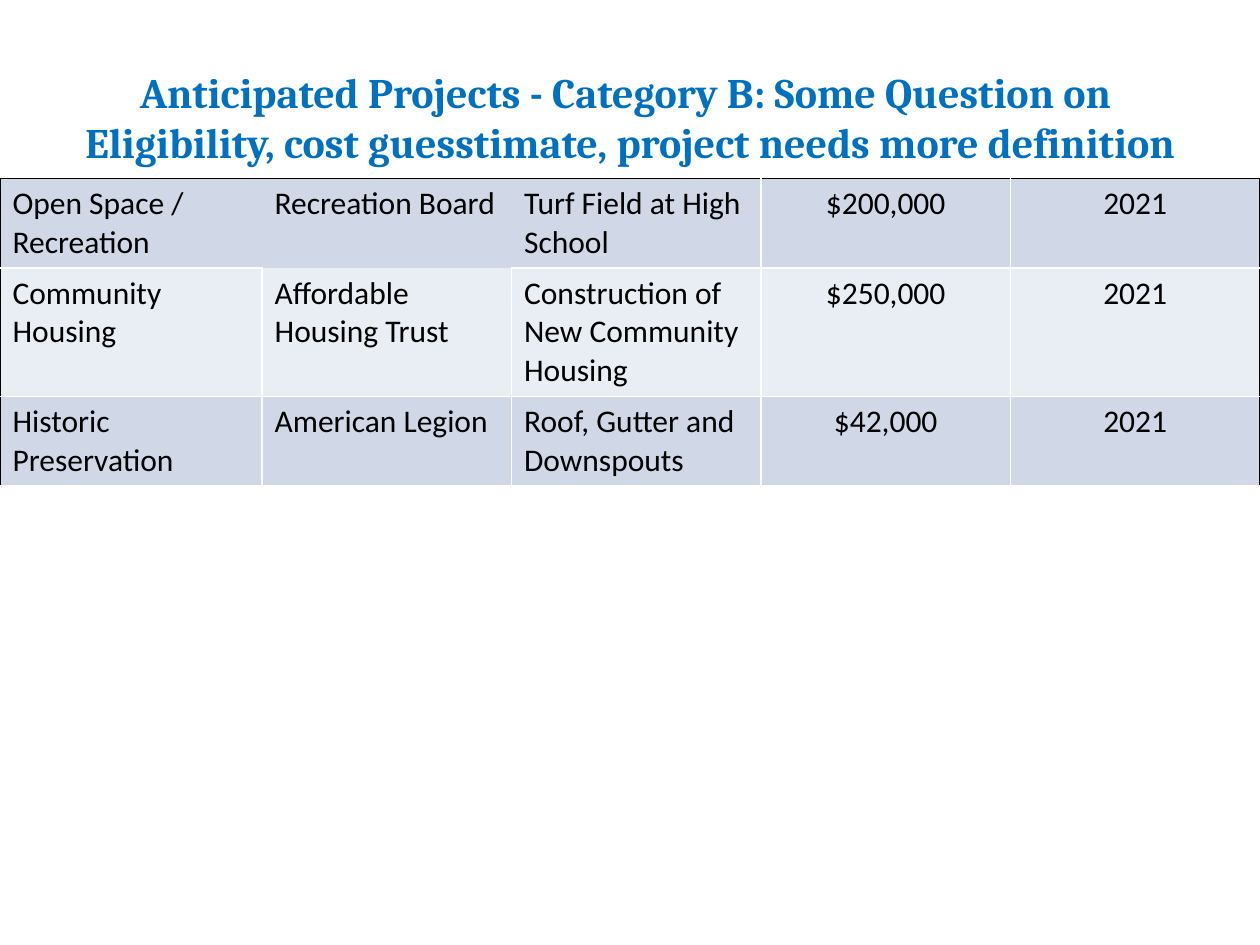
from dataclasses import astuple, dataclass

from lxml.etree import SubElement
from pptx import Presentation
from pptx.dml.color import RGBColor
from pptx.enum.text import MSO_ANCHOR, PP_ALIGN
from pptx.oxml.ns import qn
from pptx.util import Inches, Pt

COLORS = {
    "title": "0070C0",
    "text": "000000",
    "outline": "000000",
    "grid": "FFFFFF",
    "odd_row": "D0D8E8",
    "even_row": "E9EDF4",
}
TITLE_FONT = {"name": "Cambria", "size": Pt(24), "bold": True}
CELL_FONT = {"name": "Calibri", "size": Pt(18), "bold": False}

# Shares of the slide's width and height
COLUMN_SHARES = (0.208, 0.198, 0.198, 0.198, 0.198)
TABLE_TOP = 0.189
TITLE_TOP, TITLE_HEIGHT = 0.04, 0.167
ROW_HEIGHTS = (0.71, 1.02, 0.71)  # inches

# Sides (row, column, side) that have no line
OPEN_SIDES = {
    (0, 0, "R"), (0, 1, "L"), (0, 1, "R"), (0, 1, "B"), (0, 2, "L"), (1, 1, "T"),
}


@dataclass
class Project:
    category: str
    applicant: str
    description: str
    cost: str
    year: str


TITLE = (
    "Anticipated Projects - Category B: Some Question on \v"
    "Eligibility, cost guesstimate, project needs more definition"
)
PROJECTS = [
    Project("Open Space / Recreation", "Recreation Board",
            "Turf Field at High School", "$200,000", "2021"),
    Project("Community Housing", "Affordable Housing Trust",
            "Construction of New Community Housing", "$250,000", "2021"),
    Project("Historic Preservation", "American Legion",
            "Roof, Gutter and Downspouts", "$42,000", "2021"),
]
CENTERED_COLUMNS = (3, 4)


def format_paragraph(paragraph, font_format: dict, color: str, alignment) -> None:
    paragraph.alignment = alignment
    for run in paragraph.runs:
        for name, value in font_format.items():
            setattr(run.font, name, value)
        run.font.color.rgb = RGBColor.from_string(COLORS[color])


def draw_borders(cell, row: int, column: int) -> None:
    """Dark outline on the left, top and right; light lines elsewhere."""
    outline = {
        "L": column == 0,
        "R": column == len(COLUMN_SHARES) - 1,
        "T": row == 0,
        "B": False,
    }
    properties = cell._tc.get_or_add_tcPr()
    for side, is_outline in outline.items():
        line = SubElement(properties, qn(f"a:ln{side}"), w=str(Pt(1)))
        if (row, column, side) in OPEN_SIDES:
            SubElement(line, qn("a:noFill"))
        else:
            fill = SubElement(line, qn("a:solidFill"))
            color = COLORS["outline" if is_outline else "grid"]
            SubElement(fill, qn("a:srgbClr"), val=color)


def draw_cell(cell, text: str, row: int, column: int) -> None:
    draw_borders(cell, row, column)
    cell.fill.solid()
    band = "even_row" if row % 2 else "odd_row"
    cell.fill.fore_color.rgb = RGBColor.from_string(COLORS[band])
    cell.text = text
    alignment = PP_ALIGN.CENTER if column in CENTERED_COLUMNS else PP_ALIGN.LEFT
    format_paragraph(cell.text_frame.paragraphs[0], CELL_FONT, "text", alignment)


def draw_title(slide, width: int, height: int) -> None:
    title = slide.shapes.title
    place = {"left": 0, "top": int(height * TITLE_TOP),
             "width": width, "height": int(height * TITLE_HEIGHT)}
    for name, value in place.items():
        setattr(title, name, value)
    title.text_frame.text = TITLE
    title.text_frame.vertical_anchor = MSO_ANCHOR.MIDDLE
    format_paragraph(title.text_frame.paragraphs[0], TITLE_FONT, "title", PP_ALIGN.CENTER)


def draw_table(slide, width: int, height: int) -> None:
    table = slide.shapes.add_table(
        len(PROJECTS), len(COLUMN_SHARES), 0, int(height * TABLE_TOP),
        width, Inches(sum(ROW_HEIGHTS)),
    ).table
    table.first_row = False
    table.horz_banding = False
    for column, share in zip(table.columns, COLUMN_SHARES):
        column.width = int(width * share)
    for row, row_height in zip(table.rows, ROW_HEIGHTS):
        row.height = Inches(row_height)
    for row, project in enumerate(PROJECTS):
        for column, text in enumerate(astuple(project)):
            draw_cell(table.cell(row, column), text, row, column)


def main() -> None:
    presentation = Presentation()
    presentation.slide_width = Inches(10)
    presentation.slide_height = Inches(7.5)
    # Title Only layout
    slide = presentation.slides.add_slide(presentation.slide_layouts[5])
    size = presentation.slide_width, presentation.slide_height
    draw_title(slide, *size)
    draw_table(slide, *size)
    presentation.save("out.pptx")


if __name__ == "__main__":
    main()
